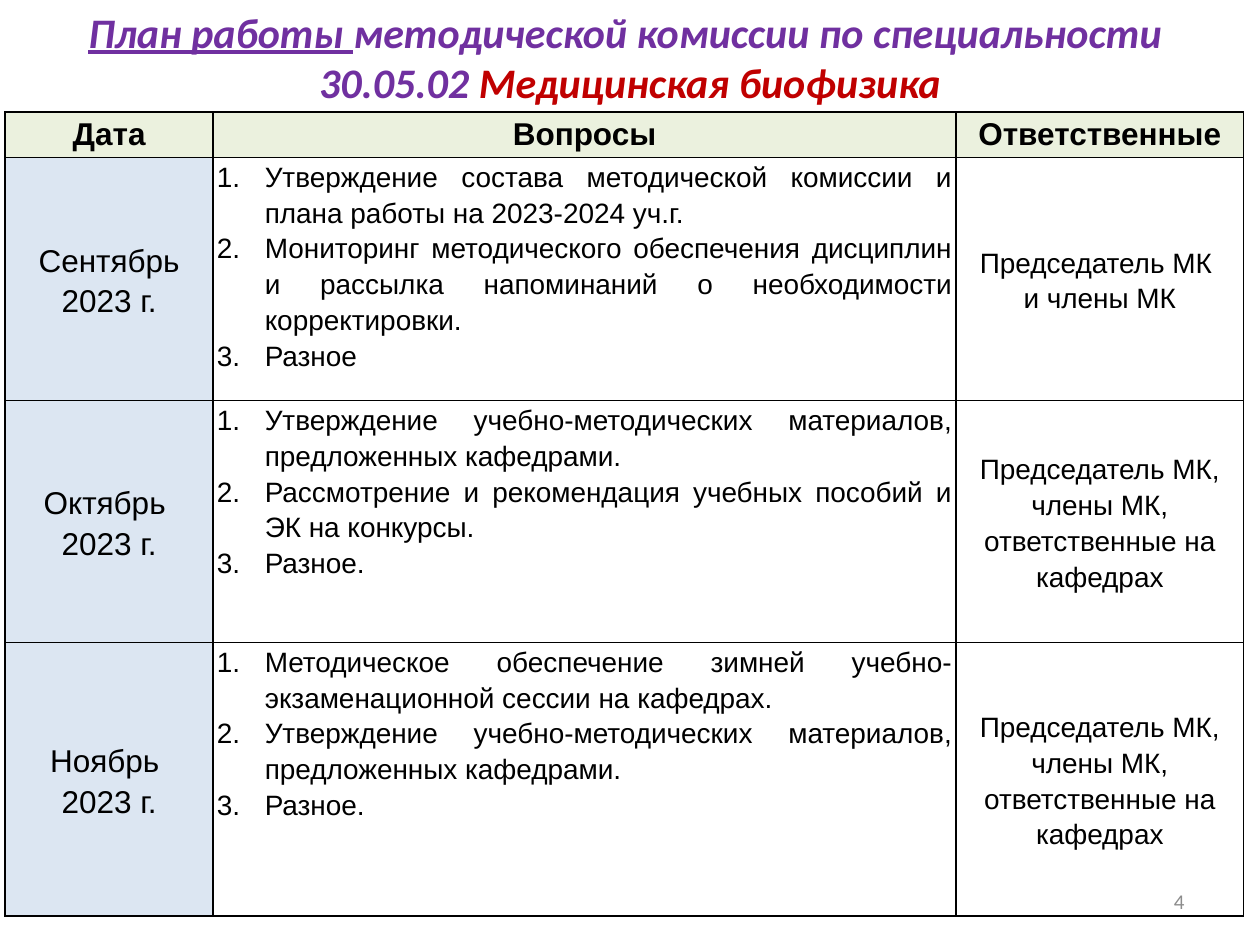
import lxml.etree
import pptx
import pptx.dml.color
import pptx.enum.text
import pptx.oxml.ns
import pptx.util

Inches = pptx.util.Inches
Pt = pptx.util.Pt
ALIGN = pptx.enum.text.PP_ALIGN
ANCHOR = pptx.enum.text.MSO_ANCHOR
qn = pptx.oxml.ns.qn

HEADERS = ["Дата", "Вопросы", "Ответственные"]
DEPARTMENT_TEAM = ["Председатель МК,", "члены МК,", "ответственные на кафедрах"]
MATERIALS = "Утверждение учебно-методических материалов, предложенных кафедрами."
MEETINGS = [
    (["Сентябрь", "2023 г."],
     ["Утверждение состава методической комиссии и плана работы на 2023-2024 уч.г.",
      "Мониторинг методического обеспечения дисциплин и рассылка напоминаний "
      "о необходимости корректировки.",
      "Разное"],
     ["Председатель МК ", "и члены МК"]),
    (["Октябрь ", "2023 г."],
     [MATERIALS,
      "Рассмотрение и рекомендация учебных пособий и ЭК на конкурсы.",
      "Разное."],
     DEPARTMENT_TEAM),
    (["Ноябрь ", "2023 г."],
     ["Методическое обеспечение зимней учебно-экзаменационной сессии на кафедрах.",
      MATERIALS,
      "Разное."],
     DEPARTMENT_TEAM),
]
TITLE = [
    [("План работы ", "7030A0", True),
     ("методической комиссии по специальности ", "7030A0", False)],
    [("30.05.02 ", "7030A0", False), ("Медицинская биофизика", "C00000", False)],
]


def color(hex_value):
    """Return the colour for a hex string."""
    return pptx.dml.color.RGBColor.from_string(hex_value)


def add_run(paragraph, text, size, font="Arial", fill="000000", bold=False):
    """Add one styled run and return it."""
    run = paragraph.add_run()
    run.text = text
    run.font.size = Pt(size)
    run.font.name = font
    run.font.bold = bold
    run.font.color.rgb = color(fill)
    return run


def next_paragraph(frame, index):
    """Return the first paragraph of a frame, or a new one after it."""
    return frame.paragraphs[0] if index == 0 else frame.add_paragraph()


def number_paragraph(paragraph):
    """Give a paragraph automatic numbering with a hanging indent."""
    properties = paragraph._p.get_or_add_pPr()
    properties.set("marL", str(Inches(0.38)))
    properties.set("indent", str(-Inches(0.38)))
    lxml.etree.SubElement(properties, qn("a:buFont"), typeface="+mj-lt")
    lxml.etree.SubElement(properties, qn("a:buAutoNum"), type="arabicPeriod")


def add_borders(cell):
    """Draw a thin black line on every side of a cell."""
    properties = cell._tc.get_or_add_tcPr()
    for side in ("a:lnL", "a:lnR", "a:lnT", "a:lnB"):
        line = lxml.etree.SubElement(properties, qn(side), w=str(Pt(1)))
        solid = lxml.etree.SubElement(line, qn("a:solidFill"))
        lxml.etree.SubElement(solid, qn("a:srgbClr"), val="000000")


def fill_cell(cell, lines, size, fill=None, bold=False, numbered=False, anchor=ANCHOR.MIDDLE):
    """Write the lines of a table cell and style it."""
    cell.margin_left = cell.margin_right = Inches(0.03)
    cell.margin_top = cell.margin_bottom = 0
    cell.vertical_anchor = anchor
    add_borders(cell)
    if fill:
        cell.fill.solid()
        cell.fill.fore_color.rgb = color(fill)
    else:
        cell.fill.background()
    for index, line in enumerate(lines):
        paragraph = next_paragraph(cell.text_frame, index)
        if numbered:
            number_paragraph(paragraph)
        paragraph.alignment = ALIGN.JUSTIFY if numbered else ALIGN.CENTER
        paragraph.line_spacing = 1.15
        add_run(paragraph, line, size, bold=bold)


def add_plan(slide, left, top, width, height):
    """Place the table of meetings in the given box."""
    plan = slide.shapes.add_table(len(MEETINGS) + 1, len(HEADERS), left, top, width, height).table
    plan.first_row = plan.horz_banding = False
    for column, share in zip(plan.columns, (1.65, 5.89, 2.28)):
        column.width = int(width * share / 9.82)
    for row, share in zip(plan.rows, (0.36, 1.93, 1.92, 2.17)):
        row.height = int(height * share / 6.38)
    for index, header in enumerate(HEADERS):
        fill_cell(plan.cell(0, index), [header], 18, "EBF1DE", bold=True, anchor=ANCHOR.TOP)
    for index, (date, questions, responsible) in enumerate(MEETINGS, 1):
        fill_cell(plan.cell(index, 0), date, 18, "DCE6F2")
        fill_cell(plan.cell(index, 1), questions, 16, numbered=True, anchor=ANCHOR.TOP)
        fill_cell(plan.cell(index, 2), responsible, 16)


def add_title(slide, left, top, width, height):
    """Place the two-line title in the given box."""
    frame = slide.shapes.add_textbox(left, top, width, height).text_frame
    frame.word_wrap = True
    frame.auto_size = pptx.enum.text.MSO_AUTO_SIZE.SHAPE_TO_FIT_TEXT
    for index, parts in enumerate(TITLE):
        paragraph = next_paragraph(frame, index)
        paragraph.alignment = ALIGN.CENTER
        for text, fill, underlined in parts:
            run = add_run(paragraph, text, 24, "Calibri", fill, bold=True)
            run.font.italic = True
            run.font.underline = underlined


def add_page_number(slide, left, top, width, height):
    """Place the page number in the given box."""
    frame = slide.shapes.add_textbox(left, top, width, height).text_frame
    frame.word_wrap = True
    frame.vertical_anchor = ANCHOR.MIDDLE
    frame.paragraphs[0].alignment = ALIGN.RIGHT
    add_run(frame.paragraphs[0], "4", 12, "Calibri", "8C8C8C")


def main():
    """Build the slide and save it."""
    deck = pptx.Presentation()
    deck.slide_width, deck.slide_height = Inches(10), Inches(7.5)
    slide = deck.slides.add_slide(deck.slide_layouts[6])
    add_page_number(slide, Inches(7.17), Inches(6.95), Inches(2.33), Inches(0.4))
    add_plan(slide, Inches(0.04), Inches(0.89), Inches(9.83), Inches(6.38))
    add_title(slide, 0, 0, Inches(10), Inches(0.91))
    deck.save("out.pptx")


if __name__ == "__main__":
    main()
